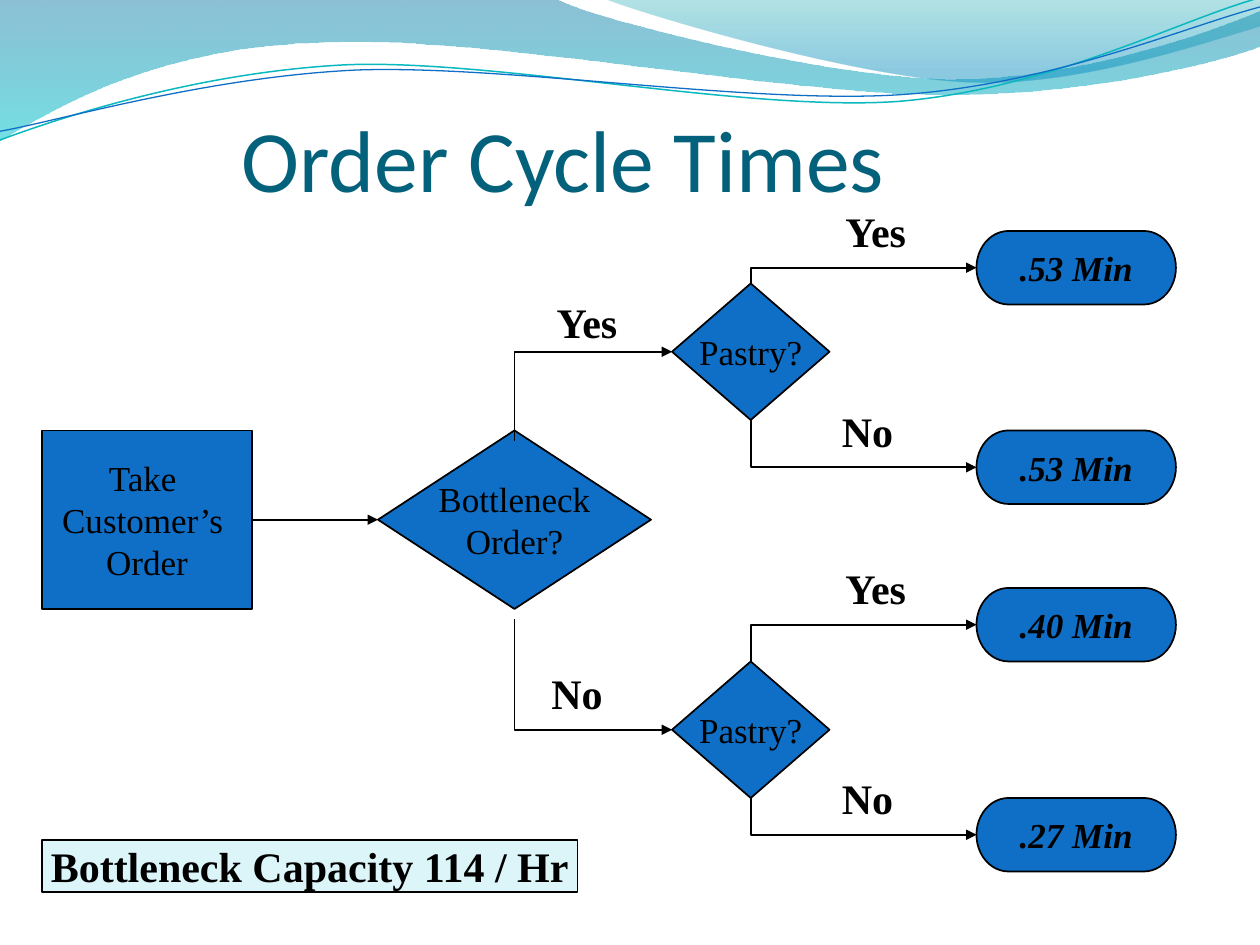
from pptx import Presentation
from pptx.dml.color import RGBColor
from pptx.enum.shapes import MSO_CONNECTOR, MSO_SHAPE
from pptx.enum.text import MSO_ANCHOR, PP_ALIGN
from pptx.oxml.ns import qn
from pptx.util import Pt
from lxml import etree

PROCESS = MSO_SHAPE.FLOWCHART_PROCESS
DECISION = MSO_SHAPE.FLOWCHART_DECISION
TERMINATOR = MSO_SHAPE.FLOWCHART_TERMINATOR
STRAIGHT = MSO_CONNECTOR.STRAIGHT
LEFT, CENTER = PP_ALIGN.LEFT, PP_ALIGN.CENTER
MIDDLE, TOP, BOTTOM = MSO_ANCHOR.MIDDLE, MSO_ANCHOR.TOP, MSO_ANCHOR.BOTTOM

BLACK = RGBColor(0x00, 0x00, 0x00)
BLUE = RGBColor(0x0F, 0x6F, 0xC6)
TURQUOISE = RGBColor(0x0A, 0xB8, 0xBF)
TITLE_TEAL = RGBColor(0x04, 0x61, 0x7B)
PALE = RGBColor(0xDB, 0xF5, 0xF9)
SERIF = "Times New Roman"

# Content
TITLE = "Order Cycle Times"
CAPACITY = "Bottleneck Capacity 114 / Hr"
FIRST_STEP = ["Take ", "Customer’s ", "Order"]
QUESTION = ["Bottleneck", "Order?"]
# answer, label position, branch start y, top of pastry diamond,
# outcomes as (answer, time, top of terminator)
BRANCHES = [
    ("Yes", (311, 166), 252, 162, [("Yes", ".53 Min", 132), ("No", ".53 Min", 246)]),
    ("No", (308, 378), 354, 378, [("Yes", ".40 Min", 336), ("No", ".27 Min", 456)]),
]
LABELS = {"Yes": (476, 52), "No": (474, 44)}  # outcome label left, width

# Header waves: L is a line to a point, C a curve with two control points
BANDS = [
    ((0, 0), [("L", (317, -1)),
              ("C", (343, 12), (478, 45), (546, 45)),
              ("C", (614, 45), (690, 19), (720, 6)),
              ("L", (721, 26)),
              ("C", (708, 32), (626, 55), (537, 54)),
              ("C", (447, 54), (275, 20), (185, 24)),
              ("C", (93, 26), (33, 60), (-1, 81))],
     [(0, RGBColor(0x00, 0x74, 0xA1), 45), (1, RGBColor(0x00, 0xC6, 0xCF), 55)]),
    ((345, -1), [("C", (367, 8), (491, 45), (554, 47)),
                 ("C", (616, 50), (692, 23), (720, 15)),
                 ("L", (720, 0))],
     [(0, RGBColor(0x00, 0xA1, 0xA9), 30), (0.8, RGBColor(0x00, 0x8B, 0xBF), 45)]),
]
STRANDS = [
    ((0, 80), [("C", (35, 67), (114, 41), (199, 37)),
               ("C", (284, 34), (427, 64), (513, 58)),
               ("C", (600, 51), (675, 11), (719, -1))], TURQUOISE, 0.85),
    ((0, 75), [("C", (34, 69), (118, 44), (204, 40)),
               ("C", (290, 37), (430, 60), (516, 54)),
               ("C", (602, 48), (678, 15), (720, 4))], BLUE, 0.75),
]

deck = Presentation()
deck.slide_width, deck.slide_height = Pt(720), Pt(540)
page = deck.slides.add_slide(deck.slide_layouts[6])


def add_wave(start, segments, close):
    points = [(Pt(x), Pt(y)) for _, *group in segments for x, y in group]
    builder = page.shapes.build_freeform(Pt(start[0]), Pt(start[1]))
    builder.add_line_segments(points, close=close)
    wave = builder.convert_to_shape()
    wave.shadow.inherit = False
    # Gather each curve's three points into one Bezier segment
    steps = iter(list(wave.element.iter(qn("a:lnTo"))))
    for kind, *group in segments:
        members = [next(steps) for _ in group]
        if kind == "C":
            curve = etree.Element(qn("a:cubicBezTo"))
            members[0].addprevious(curve)
            for member in members:
                curve.append(member[0])
                member.getparent().remove(member)
    return wave


def write(box, lines, size, font=SERIF, color=BLACK, bold=False, italic=False,
          align=CENTER, anchor=MIDDLE, wrap=False):
    frame = box.text_frame
    frame.word_wrap = wrap
    frame.vertical_anchor = anchor
    para = frame.paragraphs[0]
    para.alignment = align
    for i, line in enumerate(lines):
        if i:
            para.add_line_break()
        span = para.add_run()
        span.text = line
        span.font.size = Pt(size)
        span.font.name = font
        span.font.bold, span.font.italic = bold, italic
        span.font.color.rgb = color


def add_box(kind, left, top, width, height, lines, fill=BLUE, size=20, **style):
    box = page.shapes.add_shape(kind, Pt(left), Pt(top), Pt(width), Pt(height))
    box.shadow.inherit = False
    box.fill.solid()
    box.fill.fore_color.rgb = fill
    box.line.color.rgb = BLACK
    box.line.width = Pt(1)
    write(box, lines, size, **style)


def add_label(text, left, top):
    label = page.shapes.add_textbox(Pt(left), Pt(top), Pt(LABELS[text][1]), Pt(36))
    write(label, [text], 24, bold=True, align=LEFT, anchor=TOP)


def add_arrow(x1, y1, x2, y2):
    arrow = page.shapes.add_connector(STRAIGHT, Pt(x1), Pt(y1), Pt(x2), Pt(y2))
    arrow.line.color.rgb = BLACK
    arrow.line.width = Pt(1)
    properties = arrow.element.spPr
    line = properties.find(qn("a:ln"))
    etree.SubElement(line, qn("a:tailEnd"), type="triangle")
    etree.SubElement(properties, qn("a:effectLst"))
    return arrow


def add_elbow(x1, y1, x2, y2):
    """Vertical, then horizontal: a quarter-turned two-part connector."""
    mid_x, mid_y = (x1 + x2) / 2, (y1 + y2) / 2
    half_w, half_h = abs(y2 - y1) / 2, (x2 - x1) / 2
    rising = y2 < y1
    if rising:
        half_h = -half_h
    elbow = add_arrow(mid_x + half_w, mid_y - half_h, mid_x - half_w, mid_y + half_h)
    properties = elbow.element.spPr
    properties.find(qn("a:prstGeom")).set("prst", "bentConnector2")
    turn = 90 if rising else 270
    properties.find(qn("a:xfrm")).set("rot", str(turn * 60000))


# Header waves
for start, segments, stops in BANDS:
    band = add_wave(start, segments, True)
    band.line.fill.background()
    band.fill.gradient()
    band.fill.gradient_angle = 270
    for stop, (position, color, _) in zip(band.fill.gradient_stops, stops):
        stop.position = position
        stop.color.rgb = color
    for tint, (_, _, alpha) in zip(band.element.spPr.iter(qn("a:srgbClr")), stops):
        etree.SubElement(tint, qn("a:alpha"), val=str(alpha * 1000))
for start, segments, color, width in STRANDS:
    strand = add_wave(start, segments, False)
    strand.fill.background()
    strand.line.color.rgb = color
    strand.line.width = Pt(width)

# Title
title = page.shapes.add_textbox(Pt(138), Pt(6), Pt(558), Pt(114))
write(title, [TITLE], 50, "Calibri", TITLE_TEAL, align=LEFT, anchor=BOTTOM, wrap=True)
frame = title.text_frame
frame.margin_left = frame.margin_right = frame.margin_bottom = 0

# Order and bottleneck question
add_box(PROCESS, 24, 246, 120, 102, FIRST_STEP)
add_box(DECISION, 216, 246, 156, 102, QUESTION)
add_arrow(144, 297, 216, 297)

# Branches with their outcomes
for answer, label_at, start_y, top, outcomes in BRANCHES:
    add_box(DECISION, 384, top, 90, 78, ["Pastry?"])
    add_elbow(294, start_y, 384, top + 39)
    add_label(answer, *label_at)
    for (reply, time, end_top), corner_y in zip(outcomes, (top, top + 78)):
        add_box(TERMINATOR, 558, end_top, 114, 42, [time], bold=True, italic=True)
        add_elbow(429, corner_y, 558, end_top + 21)
        add_label(reply, LABELS[reply][0], end_top - 18)

# Capacity note
add_box(MSO_SHAPE.RECTANGLE, 24, 480, 306, 30, [CAPACITY], PALE, 24, bold=True)

deck.save("out.pptx")
